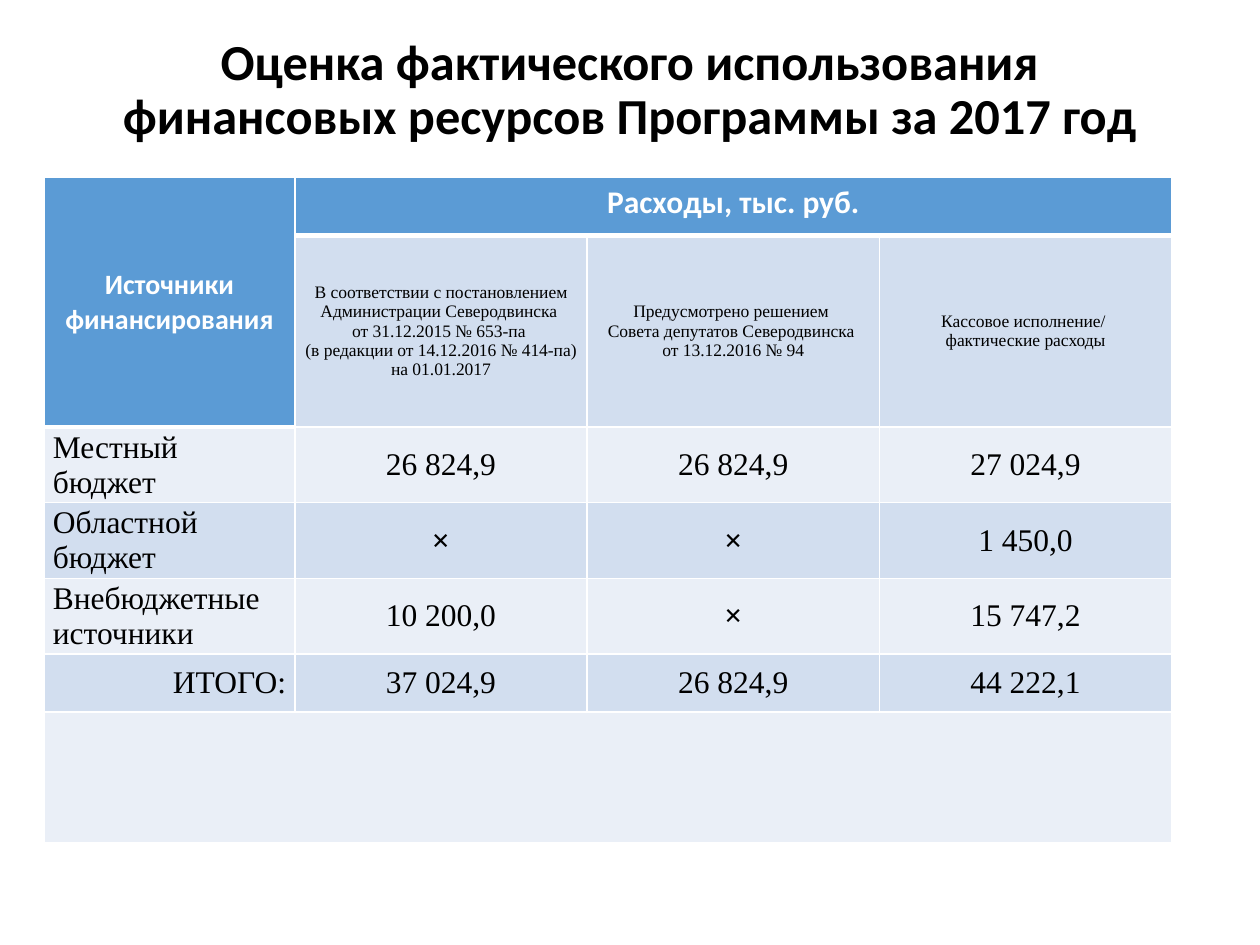
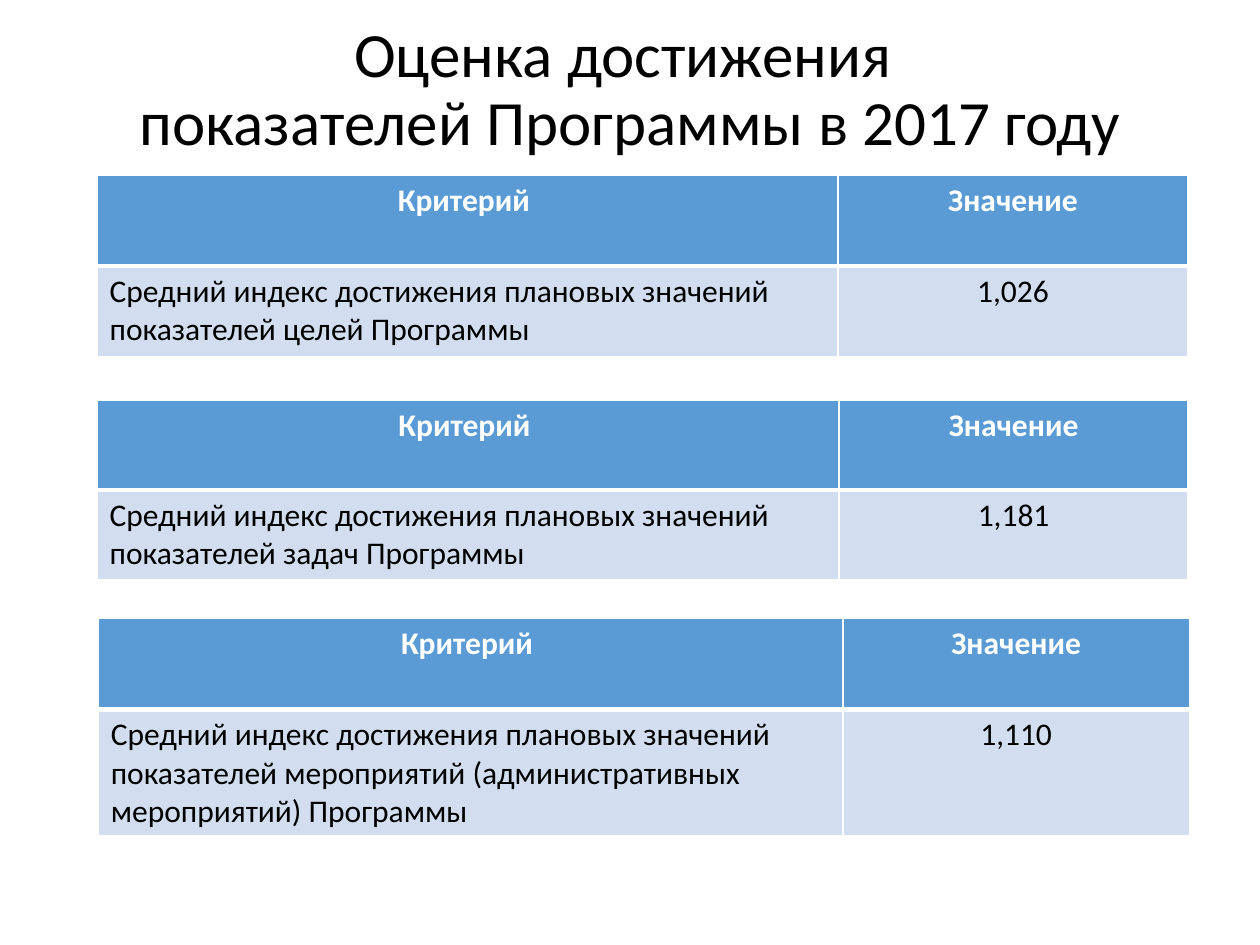
from dataclasses import dataclass
from functools import partial

from lxml import etree
from pptx import Presentation
from pptx.dml.color import RGBColor
from pptx.enum.text import MSO_ANCHOR, PP_ALIGN
from pptx.oxml.ns import qn
from pptx.slide import Slide
from pptx.table import _Cell
from pptx.text.text import TextFrame
from pptx.util import Inches, Pt

BLACK = RGBColor(0x00, 0x00, 0x00)
WHITE = RGBColor(0xFF, 0xFF, 0xFF)
HEADER_BLUE = RGBColor(0x5B, 0x9B, 0xD5)
BAND_DARK = RGBColor(0xD2, 0xDE, 0xEF)
BAND_LIGHT = RGBColor(0xEA, 0xEF, 0xF7)

SANS, SERIF = "Calibri", "Times New Roman"
LEFT, CENTER, RIGHT = PP_ALIGN.LEFT, PP_ALIGN.CENTER, PP_ALIGN.RIGHT
JUSTIFY = PP_ALIGN.JUSTIFY
TOP, MIDDLE = MSO_ANCHOR.TOP, MSO_ANCHOR.MIDDLE
THIN, THICK = Pt(1), Pt(3)


@dataclass(frozen=True)
class CellSpec:
    """Text, fill and format of one table cell."""
    text: str = ""
    fill: RGBColor = BAND_DARK
    size: float = 18
    font: str = SANS
    color: RGBColor = BLACK
    bold: bool = False
    align: PP_ALIGN = CENTER
    anchor: MSO_ANCHOR = TOP
    tight: bool = False
    rows: int = 1
    columns: int = 1


@dataclass(frozen=True)
class CriterionTable:
    """Place and content of one table of criteria."""
    left: float
    top: float
    columns: tuple[float, float]
    rows: tuple[float, float]
    criterion: str
    value: str


header_cell = partial(CellSpec, fill=HEADER_BLUE, color=WHITE, bold=True)
serif_cell = partial(CellSpec, font=SERIF, anchor=MIDDLE, tight=True)

# Budget table content
BUDGET_COLUMNS = (1.99, 2.32, 2.32, 2.32)
BUDGET_ROWS = (0.46, 1.52, 0.46, 0.46, 0.46, 0.46, 1.04)
EXPENSE_HEADINGS = (
    ("В соответствии с постановлением Администрации Северодвинска ",
     "от 31.12.2015 № 653-па ",
     "(в редакции от 14.12.2016 № 414-па)",
     "на 01.01.2017"),
    ("Предусмотрено решением ",
     "Совета депутатов Северодвинска ",
     "от 13.12.2016 № 94"),
    ("Кассовое исполнение/ ", "фактические расходы"),
)
BUDGET_LINES = (
    ("Местный бюджет", JUSTIFY, ("26 824,9", "26 824,9", "27 024,9")),
    ("Областной бюджет", JUSTIFY, ("×", "×", "1 450,0")),
    ("Внебюджетные источники", LEFT, ("10 200,0", "×", "15 747,2")),
    ("ИТОГО:", RIGHT, ("37 024,9", "26 824,9", "44 222,1")),
)

# Criteria tables content
CRITERIA = (
    CriterionTable(0.77, 1.39, (5.88, 2.78), (0.72, 0.72),
                   "Средний индекс достижения плановых значений "
                   "показателей целей Программы", "1,026"),
    CriterionTable(0.77, 3.18, (5.89, 2.77), (0.71, 0.71),
                   "Средний индекс достижения плановых значений "
                   "показателей задач Программы", "1,181"),
    CriterionTable(0.78, 4.91, (5.91, 2.75), (0.72, 1.0),
                   "Средний индекс достижения плановых значений показателей "
                   "мероприятий (административных мероприятий) Программы",
                   "1,110"),
)


def write_text(frame: TextFrame, paragraphs: tuple[str, ...], *, size: float,
               font: str = SANS, color: RGBColor = BLACK, bold: bool = False,
               align: PP_ALIGN = CENTER, spacing: float = 1.0) -> None:
    """Fill a frame with paragraphs; a newline inside one is a line break."""
    for index, text in enumerate(paragraphs):
        paragraph = frame.add_paragraph() if index else frame.paragraphs[0]
        paragraph.text = text
        paragraph.alignment = align
        paragraph.line_spacing = spacing
        for run in paragraph.runs:
            run.font.size = Pt(size)
            run.font.name = font
            run.font.bold = bold
            run.font.color.rgb = color


def add_title(slide: Slide, text: str, size: float, bold: bool = False) -> None:
    box = slide.shapes.add_textbox(Inches(0.69), Inches(0.18),
                                   Inches(8.62), Inches(1.09))
    box.text_frame.word_wrap = True
    box.text_frame.vertical_anchor = MIDDLE
    write_text(box.text_frame, (text,), size=size, bold=bold, spacing=0.9)


def set_borders(cell: _Cell, top: int, bottom: int) -> None:
    """Draw white borders; line elements come before the cell's fill."""
    properties = cell._tc.get_or_add_tcPr()
    widths = {"a:lnL": THIN, "a:lnR": THIN, "a:lnT": top, "a:lnB": bottom}
    for position, (tag, width) in enumerate(widths.items()):
        line = etree.Element(qn(tag), w=str(int(width)))
        fill = etree.SubElement(line, qn("a:solidFill"))
        etree.SubElement(fill, qn("a:srgbClr"), val=str(WHITE))
        properties.insert(position, line)


def format_cell(cell: _Cell, spec: CellSpec) -> None:
    cell.fill.solid()
    cell.fill.fore_color.rgb = spec.fill
    cell.vertical_anchor = spec.anchor
    if spec.tight:
        cell.margin_left = cell.margin_right = Inches(0.07)
        cell.margin_top = cell.margin_bottom = Inches(0)
    if spec.text:
        write_text(cell.text_frame, tuple(spec.text.split("\n")),
                   size=spec.size, font=spec.font, color=spec.color,
                   bold=spec.bold, align=spec.align)


def add_table(slide: Slide, left: float, top: float,
              widths: tuple[float, ...], heights: tuple[float, ...],
              specs: dict[tuple[int, int], CellSpec]) -> None:
    """Add a table whose cells are given by their (row, column) origin."""
    table = slide.shapes.add_table(
        len(heights), len(widths), Inches(left), Inches(top),
        Inches(sum(widths)), Inches(sum(heights))).table
    table.first_row = table.horz_banding = False
    for column, width in zip(table.columns, widths):
        column.width = Inches(width)
    for row, height in zip(table.rows, heights):
        row.height = Inches(height)

    headers = set()
    for (row, column), spec in specs.items():
        covered = [(r, c) for r in range(row, row + spec.rows)
                   for c in range(column, column + spec.columns)]
        if spec.fill == HEADER_BLUE:
            headers.update(covered)
        if len(covered) > 1:
            table.cell(row, column).merge(table.cell(*covered[-1]))
        format_cell(table.cell(row, column), spec)

    # A thick rule separates header cells from the body
    for row in range(len(heights)):
        for column in range(len(widths)):
            set_borders(table.cell(row, column),
                        THICK if (row - 1, column) in headers else THIN,
                        THICK if (row, column) in headers else THIN)


def build_budget_slide(slide: Slide) -> None:
    add_title(slide, "Оценка фактического использования "
                     "финансовых ресурсов Программы за 2017 год", 28.8, True)
    specs = {
        (0, 0): header_cell("Источники финансирования", size=16,
                            anchor=MIDDLE, rows=2),
        (0, 1): header_cell("Расходы, тыс. руб.", columns=3),
    }
    for column, lines in enumerate(EXPENSE_HEADINGS, start=1):
        specs[1, column] = serif_cell("\n".join(lines), size=10)
    for row, (source, align, amounts) in enumerate(BUDGET_LINES, start=2):
        fill = BAND_DARK if row % 2 else BAND_LIGHT
        specs[row, 0] = serif_cell(source, fill=fill, align=align)
        for column, amount in enumerate(amounts, start=1):
            specs[row, column] = serif_cell(amount, fill=fill,
                                            bold=amount == "×")
    specs[len(BUDGET_ROWS) - 1, 0] = CellSpec(fill=BAND_LIGHT, columns=4)
    add_table(slide, 0.35, 1.41, BUDGET_COLUMNS, BUDGET_ROWS, specs)


def build_criteria_slide(slide: Slide) -> None:
    add_title(slide, "Оценка достижения \nпоказателей Программы в 2017 году", 36)
    for item in CRITERIA:
        add_table(slide, item.left, item.top, item.columns, item.rows, {
            (0, 0): header_cell("Критерий "),
            (0, 1): header_cell("Значение"),
            (1, 0): CellSpec(item.criterion, align=LEFT),
            (1, 1): CellSpec(item.value),
        })


def main() -> None:
    presentation = Presentation()
    presentation.slide_width = Inches(10)
    presentation.slide_height = Inches(7.5)
    blank_layout = presentation.slide_layouts[6]
    for build in (build_budget_slide, build_criteria_slide):
        build(presentation.slides.add_slide(blank_layout))
    presentation.save("out.pptx")


if __name__ == "__main__":
    main()
